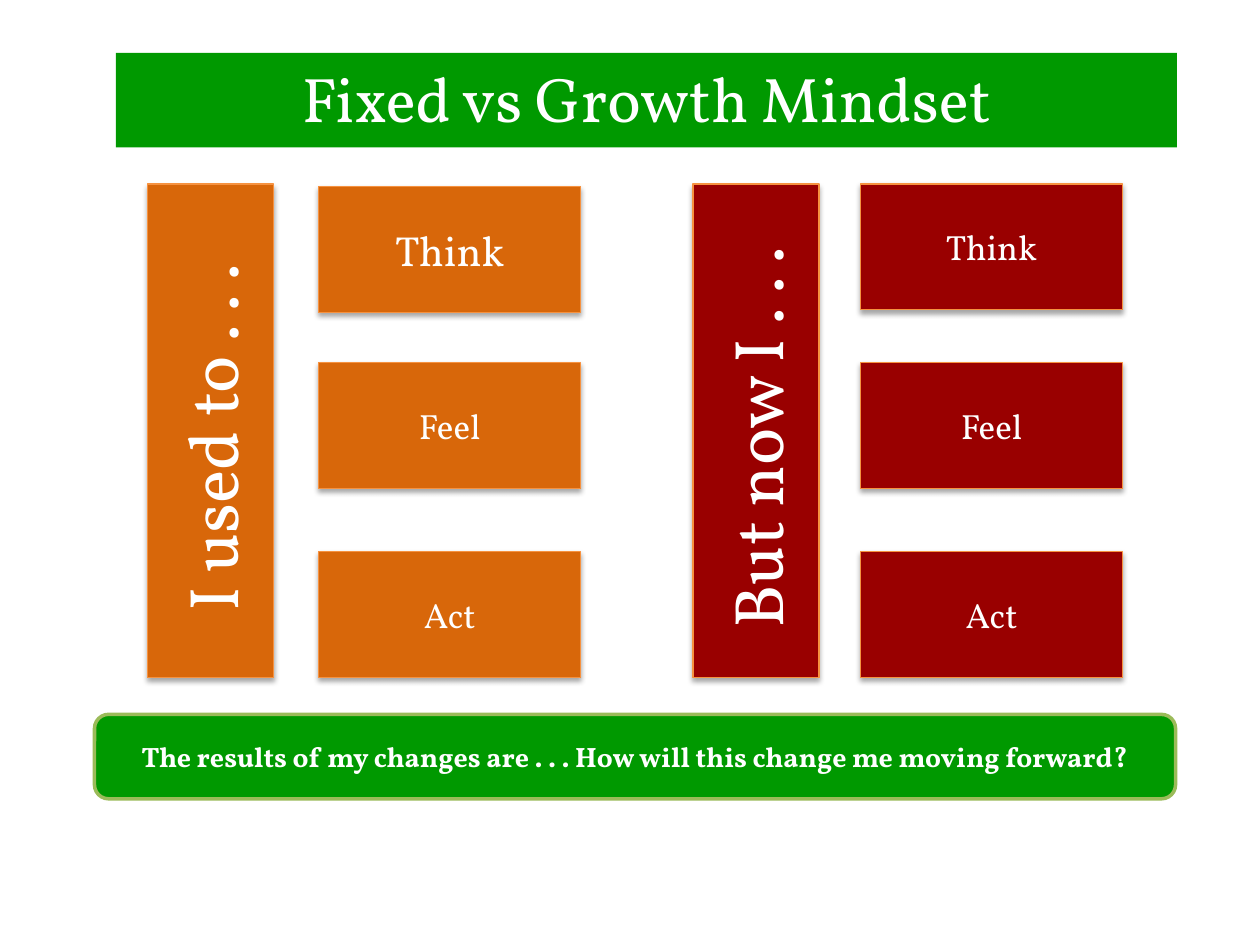
from lxml.etree import SubElement as Sub
from pptx import Presentation
from pptx.dml.color import RGBColor as RGB
from pptx.enum.shapes import MSO_SHAPE as Kind
from pptx.enum.text import MSO_ANCHOR as Anchor, PP_ALIGN as Align
from pptx.oxml.ns import qn
from pptx.util import Inches, Pt

COLORS = {
    "green": "009900",
    "orange": "D8670A",
    "red": "990000",
    "edge": "F69240",
    "olive": "9BBB59",
    "white": "FFFFFF",
    "black": "000000",
}


def color(name):
    return RGB.from_string(COLORS[name])


class Board:
    """Holds the text style and the slide being filled."""

    font = "Vollkorn"

    def __init__(self, slide):
        self.slide = slide

    def box(self, text, place, fill, size, kind=Kind.RECTANGLE, edge=None,
            width=0.75, anchor=Anchor.MIDDLE, bold=False):
        shape = self.slide.shapes.add_shape(kind, *map(Inches, place))
        shape.shadow.inherit = False
        shape.fill.solid()
        shape.fill.fore_color.rgb = color(fill)
        if edge:
            shape.line.color.rgb = color(edge)
            shape.line.width = Pt(width)
        else:
            shape.line.fill.background()
        frame = shape.text_frame
        frame.word_wrap = True
        frame.vertical_anchor = anchor
        par = frame.paragraphs[0]
        par.text = text
        par.alignment = Align.CENTER
        par.font.name = self.font
        par.font.size = Pt(size)
        par.font.bold = bold
        par.font.color.rgb = color("white")
        return shape

    def title(self, text, place):
        self.box(text, place, "green", 36, anchor=Anchor.TOP)

    def card(self, text, place, fill, size=20):
        """Add a thinly edged box with a soft shadow below it."""
        shape = self.box(text, place, fill, size, edge="edge")
        effects = shape._element.spPr.find(qn("a:effectLst"))
        shadow = Sub(effects, qn("a:outerShdw"), blurRad=str(Pt(3.1)),
                     dist=str(Pt(1.8)), dir="5400000", rotWithShape="0")
        tint = Sub(shadow, qn("a:srgbClr"), val=COLORS["black"])
        Sub(tint, qn("a:alpha"), val="35000")
        return shape

    def banner(self, text, place, fill):
        """Add a card whose text reads upwards."""
        shape = self.card(text, place, fill, 40)
        shape.text_frame._txBody.bodyPr.set("vert", "vert270")

    def footer(self, text, place):
        self.box(text, place, "green", 16, Kind.ROUNDED_RECTANGLE,
                 "olive", 2, bold=True)


def main():
    deck = Presentation()
    deck.slide_width, deck.slide_height = Inches(10), Inches(7.5)
    board = Board(deck.slides.add_slide(deck.slide_layouts[6]))

    board.title("Fixed vs Growth Mindset", (0.92, 0.42, 8.42, 0.75))

    # Heading, fill, banner left, cards left, first card's top and text size
    sides = [
        ("I used to . . . ", "orange", 1.17, 2.53, 1.48, 24),
        ("But now I . . . ", "red", 5.5, 6.83, 1.46, 20),
    ]
    for head, fill, left, cards, top, size in sides:
        board.banner(head, (left, 1.46, 1, 3.92), fill)
        steps = [("Think", top, size), ("Feel", 2.88, 20), ("Act", 4.38, 20)]
        for word, y, points in steps:
            board.card(word, (cards, y, 2.08, 1), fill, points)

    board.footer("The results of my changes are . . . "
                 "How will this change me moving forward?",
                 (0.75, 5.67, 8.58, 0.67))
    deck.save("out.pptx")


if __name__ == "__main__":
    main()
